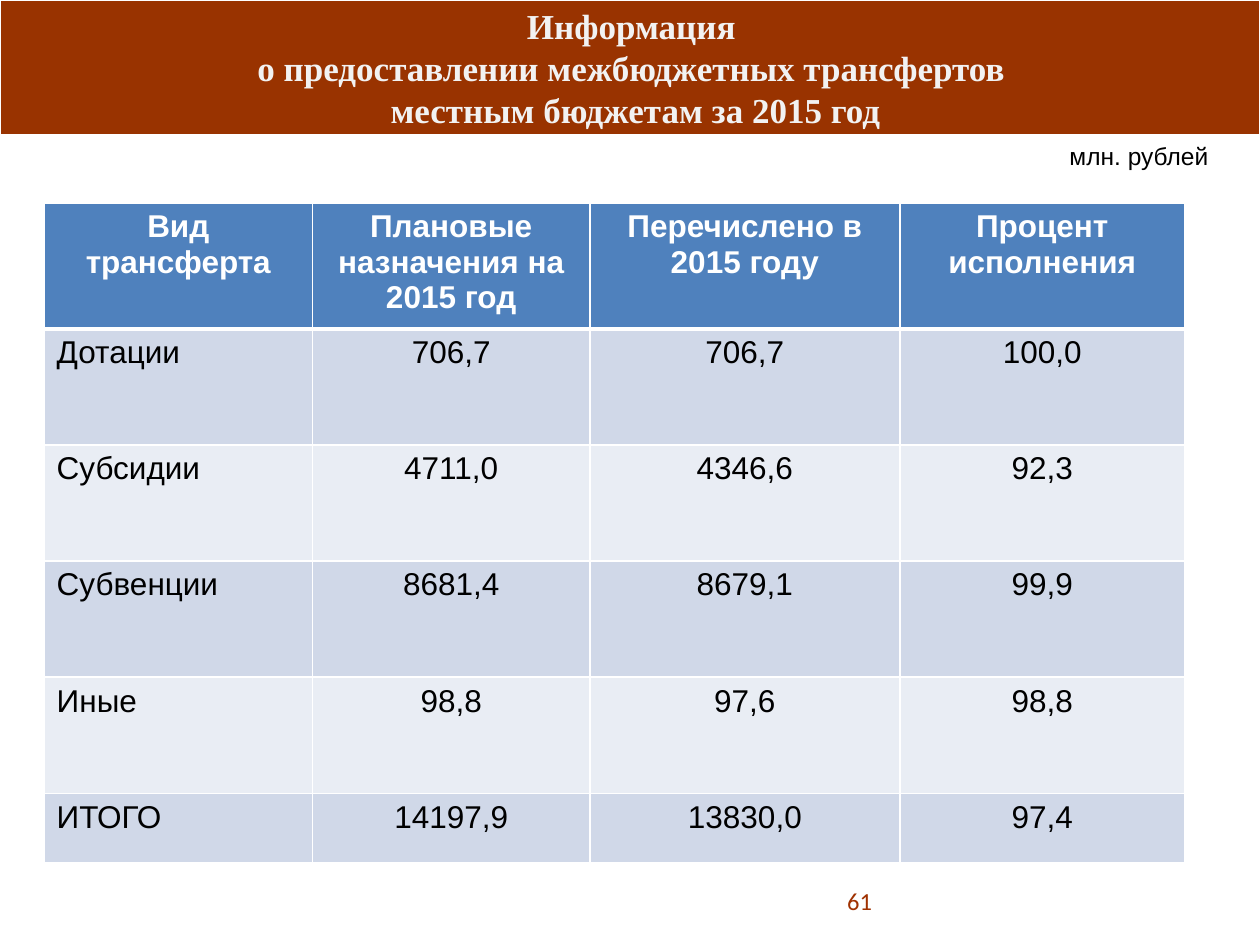
import pptx
import pptx.util
import pptx.dml.color
import pptx.enum.shapes
import pptx.enum.text
import pptx.oxml
import pptx.oxml.ns
from pptx.util import Cm

TITLE = (
    "Информация \n"
    "о предоставлении межбюджетных трансфертов \n"
    "местным бюджетам за 2015 год"
)
UNIT = "млн. рублей"
PAGE = "61"
HEADER = ["Вид трансферта", "Плановые назначения на 2015 год",
          "Перечислено в 2015 году", "Процент исполнения"]
TRANSFERS = [
    ("Дотации", "706,7", "706,7", "100,0"),
    ("Субсидии", "4711,0", "4346,6", "92,3"),
    ("Субвенции", "8681,4", "8679,1", "99,9"),
    ("Иные", "98,8", "97,6", "98,8"),
    ("ИТОГО", "14197,9", "13830,0", "97,4"),
]
COLUMNS = [5.41, 5.59, 6.25, 5.74]
ROWS = [2.24] + [2.34] * 4 + [1.4]

THEME = {
    "white": "FFFFFF", "black": "000000", "band": "993300", "title": "F2F2F2",
    "header": "4F81BD", "odd": "D0D8E8", "even": "E9EDF4", "page": "A03202",
    "title_pt": 20, "body_pt": 18, "small_pt": 14,
    "title_font": "Times New Roman", "body_font": "Arial", "page_font": "Calibri",
}

ALIGN = pptx.enum.text.PP_ALIGN
MIDDLE = pptx.enum.text.MSO_ANCHOR.MIDDLE


def rgb(name):
    return pptx.dml.color.RGBColor.from_string(THEME[name])


def write(tf, text, size="body_pt", font="body_font", color="black",
          bold=False, align=ALIGN.LEFT):
    p = tf.paragraphs[0]
    p.alignment = align
    for i, line in enumerate(text.split("\n")):
        if i:
            p.add_line_break()
        r = p.add_run()
        r.text = line
        r.font.size = pptx.util.Pt(THEME[size])
        r.font.name = THEME[font]
        r.font.bold = bold
        r.font.color.rgb = rgb(color)


def text_box(s, left, top, width, height, text, wrap=True, anchor=None, **fmt):
    tf = s.shapes.add_textbox(Cm(left), Cm(top), Cm(width), Cm(height)).text_frame
    tf.word_wrap = wrap
    tf.vertical_anchor = anchor
    write(tf, text, **fmt)


def set_borders(cell, **points):
    tc_pr = cell._tc.get_or_add_tcPr()
    for i, side in enumerate("LRTB"):
        width = pptx.util.Pt(points.get(side, 1))
        tc_pr.insert(i, pptx.oxml.parse_xml(
            f'<a:ln{side} {pptx.oxml.ns.nsdecls("a")} w="{width}"><a:solidFill>'
            f'<a:srgbClr val="{THEME["white"]}"/></a:solidFill></a:ln{side}>'))


def add_band(s, width):
    sp = s.shapes.add_shape(pptx.enum.shapes.MSO_SHAPE.RECTANGLE,
                            0, 0, width, Cm(2.72))
    sp.shadow.inherit = False
    sp.fill.solid()
    sp.fill.fore_color.rgb = rgb("band")
    sp.line.color.rgb = rgb("white")
    sp.line.width = pptx.util.Pt(0.75)


def add_transfers(s):
    table = s.shapes.add_table(len(ROWS), len(COLUMNS), Cm(0.89), Cm(4.09),
                               Cm(sum(COLUMNS)), Cm(sum(ROWS))).table
    for column, width in zip(table.columns, COLUMNS):
        column.width = Cm(width)
    for row, height in zip(table.rows, ROWS):
        row.height = Cm(height)
    for i, values in enumerate([HEADER, *TRANSFERS]):
        head = i == 0
        fill = "header" if head else ("odd" if i % 2 else "even")
        for j, value in enumerate(values):
            cell = table.cell(i, j)
            cell.fill.solid()
            cell.fill.fore_color.rgb = rgb(fill)
            set_borders(cell, B=3 if head else 1, T=3 if i == 1 else 1)
            write(cell.text_frame, value, bold=head,
                  color="white" if head else "black",
                  align=ALIGN.CENTER if head or j else ALIGN.LEFT)


def main():
    prs = pptx.Presentation()
    prs.slide_width, prs.slide_height = Cm(25.4), Cm(19.05)
    s = prs.slides.add_slide(prs.slide_layouts[6])
    add_band(s, prs.slide_width)
    text_box(s, 2.11, 0, 21.41, 2.72, TITLE, anchor=MIDDLE, size="title_pt",
             font="title_font", color="title", bold=True, align=ALIGN.CENTER)
    text_box(s, 21.31, 2.72, 3.33, 0.86, UNIT, wrap=False, size="small_pt")
    add_transfers(s)
    text_box(s, 14.91, 17.65, 2.92, 1.02, PAGE, anchor=MIDDLE, size="small_pt",
             font="page_font", color="page", align=ALIGN.RIGHT)
    prs.save("out.pptx")


if __name__ == "__main__":
    main()
